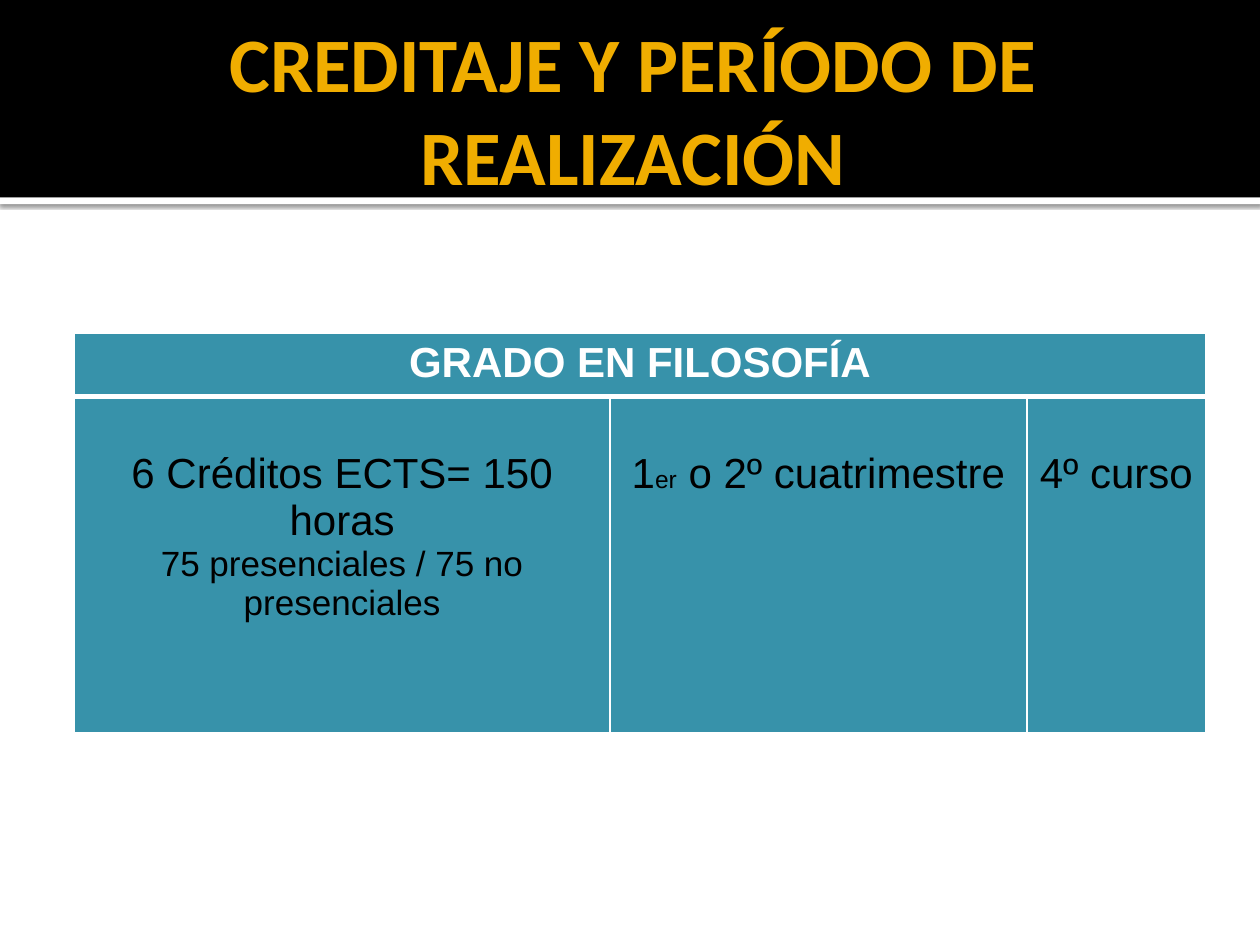
from lxml.etree import SubElement
from pptx import Presentation
from pptx.dml.color import RGBColor
from pptx.enum.shapes import MSO_SHAPE
from pptx.enum.text import MSO_ANCHOR, MSO_AUTO_SIZE, PP_ALIGN
from pptx.oxml import parse_xml
from pptx.oxml.ns import nsdecls, qn
from pptx.util import Inches, Pt

BLACK, WHITE, GOLD, TEAL = "000000", "FFFFFF", "F0AD00", "3792AA"


def color(hex_text):
    return RGBColor.from_string(hex_text)


def write(para, text, size=24, font="Arial", fill=BLACK, bold=False):
    span = para.add_run()
    span.text = text
    span.font.size, span.font.name, span.font.bold = Pt(size), font, bold
    span.font.color.rgb = color(fill)
    para.alignment = PP_ALIGN.CENTER


class Builder:
    def __init__(self, deck):
        self.page = deck.slides.add_slide(deck.slide_layouts[5])
        self.width, self.height = deck.slide_width, deck.slide_height

    def place(self, left, top, width, height):
        """Turn shares of the page into lengths."""
        return (round(left * self.width), round(top * self.height),
                round(width * self.width), round(height * self.height))

    def band(self, top, height, fill, shadow=False):
        box = self.page.shapes.add_shape(
            MSO_SHAPE.RECTANGLE, *self.place(0, top, 1, height))
        box.shadow.inherit = False
        box.fill.solid()
        box.fill.fore_color.rgb = color(fill)
        box.line.fill.background()
        if shadow:
            effects = box._element.spPr.find(qn("a:effectLst"))
            effects.append(parse_xml(
                f'<a:outerShdw {nsdecls("a")} blurRad="{Pt(2.5)}" dist="{Pt(0.8)}" '
                'dir="5400000" rotWithShape="0"><a:srgbClr val="000000">'
                '<a:alpha val="60000"/></a:srgbClr></a:outerShdw>'))

    def title(self, text, area):
        box = self.page.shapes.title
        box.left, box.top, box.width, box.height = self.place(*area)
        frame = box.text_frame
        frame.auto_size, frame.word_wrap = MSO_AUTO_SIZE.NONE, True
        frame.vertical_anchor = MSO_ANCHOR.MIDDLE
        frame.margin_left = Inches(0.1)
        frame.margin_top = frame.margin_right = frame.margin_bottom = Inches(0.05)
        write(frame.paragraphs[0], text, size=44, font="Calibri", fill=GOLD, bold=True)
        # Bring the title in front of the bands
        self.page.shapes._spTree.append(box._element)

    def table(self, area, columns, rows):
        grid = self.page.shapes.add_table(
            len(rows), len(columns), *self.place(*area)).table
        for column, width in zip(grid.columns, columns):
            column.width = Inches(width)
        for row, height in zip(grid.rows, rows):
            row.height = Inches(height)
        return grid

    def cell(self, cell, paragraphs, top=0.05, **edges):
        """Fill a cell; each paragraph is a list of (text, format) pairs."""
        cell.margin_top = Inches(top)
        frame = cell.text_frame
        for index, spans in enumerate(paragraphs):
            para = frame.add_paragraph() if index else frame.paragraphs[0]
            for text, style in spans:
                write(para, text, **style)
        self.borders(cell, **edges)
        cell.fill.solid()
        cell.fill.fore_color.rgb = color(TEAL)

    def borders(self, cell, **edges):
        properties = cell._tc.get_or_add_tcPr()
        for side in "LRTB":
            line = SubElement(properties, qn(f"a:ln{side}"), w=str(Pt(edges.get(side, 1))))
            fill = SubElement(line, qn("a:solidFill"))
            SubElement(fill, qn("a:srgbClr"), val=WHITE)


def main():
    deck = Presentation()
    deck.slide_width, deck.slide_height = Inches(10), Inches(7.5)
    builder = Builder(deck)

    # Header
    builder.band(0.209, 0.007, WHITE, shadow=True)
    builder.band(0, 0.209, BLACK)
    builder.title("CREDITAJE Y PERÍODO DE REALIZACIÓN", (0, 0.023, 1, 0.183))

    # Table heading across all columns
    grid = builder.table((0.059, 0.353, 0.898, 0.423), (4.25, 3.31, 1.42), (0.5, 2.67))
    heading = [[("GRADO EN FILOSOFÍA", {"fill": WHITE, "bold": True})]]
    grid.cell(0, 0).merge(grid.cell(0, 2))
    for index in range(3):
        builder.cell(grid.cell(0, index), [] if index else heading, B=3)

    # Credits, term and year
    details = (
        [[("6 Créditos ECTS= 150 horas", {})],
         [("75 presenciales / 75 no presenciales", {"size": 20})]],
        [[("1", {}), ("er", {"size": 14}), (" o 2º cuatrimestre", {})]],
        [[("4º curso", {})]],
    )
    for index, paragraphs in enumerate(details):
        builder.cell(grid.cell(1, index), paragraphs, top=0.43, T=3)

    deck.save("out.pptx")


if __name__ == "__main__":
    main()
